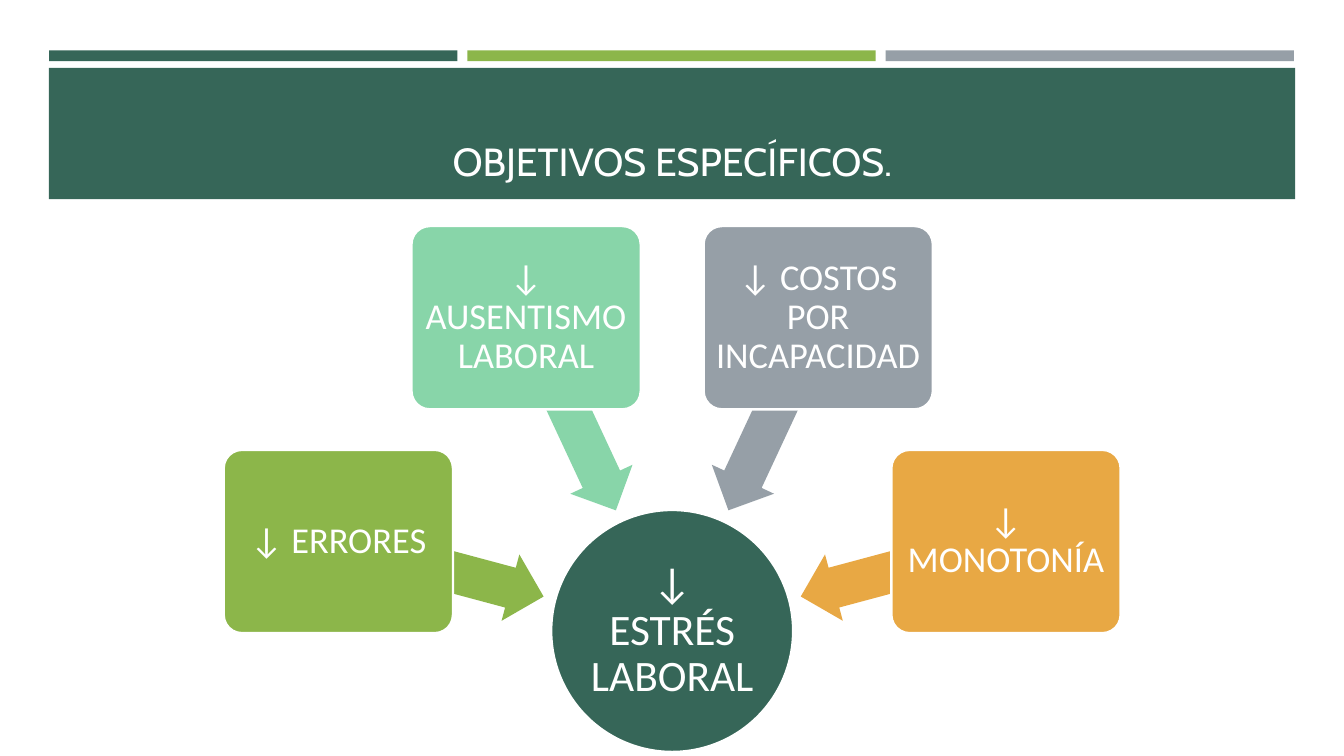
from math import cos, radians, sin

from pptx import Presentation
from pptx.dml.color import RGBColor
from pptx.enum.shapes import MSO_SHAPE as Shape
from pptx.enum.text import MSO_ANCHOR as Anchor, PP_ALIGN as Align
from pptx.util import Cm, Pt

GREEN, LIME, GREY = "366658", "8CB64A", "969FA7"
MINT, ORANGE, WHITE = "88D5A9", "E8A844", "FFFFFF"
HUB_X, HUB_Y, HUB_SIZE = 16.94, 15.9, 6.1
CARD_RADIUS, CARD_WIDTH, CARD_HEIGHT = 8.71, 5.78, 4.62
ARROW_RADIUS, ARROW_WIDTH, ARROW_HEIGHT = 6.02, 5.33, 1.73
FIRST_ANGLE, ANGLE_STEP = 195, 50
CARDS = [
    ("↓ ERRORES", LIME),
    ("↓ AUSENTISMO LABORAL", MINT),
    ("↓ COSTOS POR INCAPACIDAD", GREY),
    ("↓ MONOTONÍA", ORANGE),
]


def color(value):
    return RGBColor.from_string(value)


def apply_format(target, values):
    for name, value in values.items():
        setattr(target, name, value)


def write_text(shape, text, font, size, inset, anchor, spacing):
    frame = shape.text_frame
    margins = ("margin_left", "margin_top", "margin_right", "margin_bottom")
    apply_format(frame, {"word_wrap": True, "vertical_anchor": anchor})
    apply_format(frame, dict(zip(margins, map(Cm, inset))))
    para = frame.paragraphs[0]
    apply_format(para, {"alignment": Align.CENTER, "line_spacing": spacing})
    span = para.add_run()
    span.text = text
    apply_format(span.font, {"name": font, "size": Pt(size)})
    span.font.color.rgb = color(WHITE)


def add_box(page, kind, left, top, width, height, fill, outlined=False):
    box = page.shapes.add_shape(kind, Cm(left), Cm(top), Cm(width), Cm(height))
    box.shadow.inherit = False
    box.fill.solid()
    box.fill.fore_color.rgb = color(fill)
    if outlined:
        box.line.color.rgb = color(WHITE)
        box.line.width = Pt(1.75)
    else:
        box.line.fill.background()
    return box


def add_centered(page, kind, x, y, width, height, fill, outlined=False):
    return add_box(page, kind, x - width / 2, y - height / 2,
                   width, height, fill, outlined)


def add_header(page):
    for index, fill in enumerate((GREEN, LIME, GREY)):
        add_box(page, Shape.RECTANGLE, 1.24 + 10.54 * index, 1.27, 10.29, 0.27, fill)
    add_box(page, Shape.RECTANGLE, 1.23, 1.71, 31.41, 3.31, GREEN)


def add_title(page, text):
    title = page.shapes.title
    apply_format(title, {"left": Cm(1.63), "top": Cm(1.96),
                         "width": Cm(30.63), "height": Cm(2.82)})
    write_text(title, text, "Cabin", 28, (0.25, 0.13, 0.25, 0.13), Anchor.BOTTOM, 1.0)
    page.shapes._spTree.append(title._element)


def add_hub(page, text):
    hub = add_centered(page, Shape.OVAL, HUB_X, HUB_Y, HUB_SIZE, HUB_SIZE, GREEN, True)
    write_text(hub, text, "Calibri", 31, (0.05,) * 4, Anchor.MIDDLE, 0.9)


def add_spoke(page, angle, text, fill):
    across, down = cos(radians(angle)), sin(radians(angle))
    arrow = add_centered(page, Shape.LEFT_ARROW, HUB_X + ARROW_RADIUS * across,
                         HUB_Y + ARROW_RADIUS * down, ARROW_WIDTH, ARROW_HEIGHT, fill)
    arrow.adjustments[0] = 0.6
    arrow.adjustments[1] = 0.5
    arrow.rotation = angle
    card = add_centered(page, Shape.ROUNDED_RECTANGLE, HUB_X + CARD_RADIUS * across,
                        HUB_Y + CARD_RADIUS * down, CARD_WIDTH, CARD_HEIGHT, fill, True)
    card.adjustments[0] = 0.1
    write_text(card, text, "Calibri", 26, (0.13,) * 4, Anchor.MIDDLE, 0.9)


def main():
    deck = Presentation()
    apply_format(deck, {"slide_width": Cm(33.87), "slide_height": Cm(19.05)})
    page = deck.slides.add_slide(deck.slide_layouts[5])
    add_header(page)
    add_title(page, "OBJETIVOS ESPECÍFICOS.")
    add_hub(page, "↓ ESTRÉS LABORAL")
    for index, (text, fill) in enumerate(CARDS):
        add_spoke(page, FIRST_ANGLE + ANGLE_STEP * index, text, fill)
    deck.save("out.pptx")


if __name__ == "__main__":
    main()
